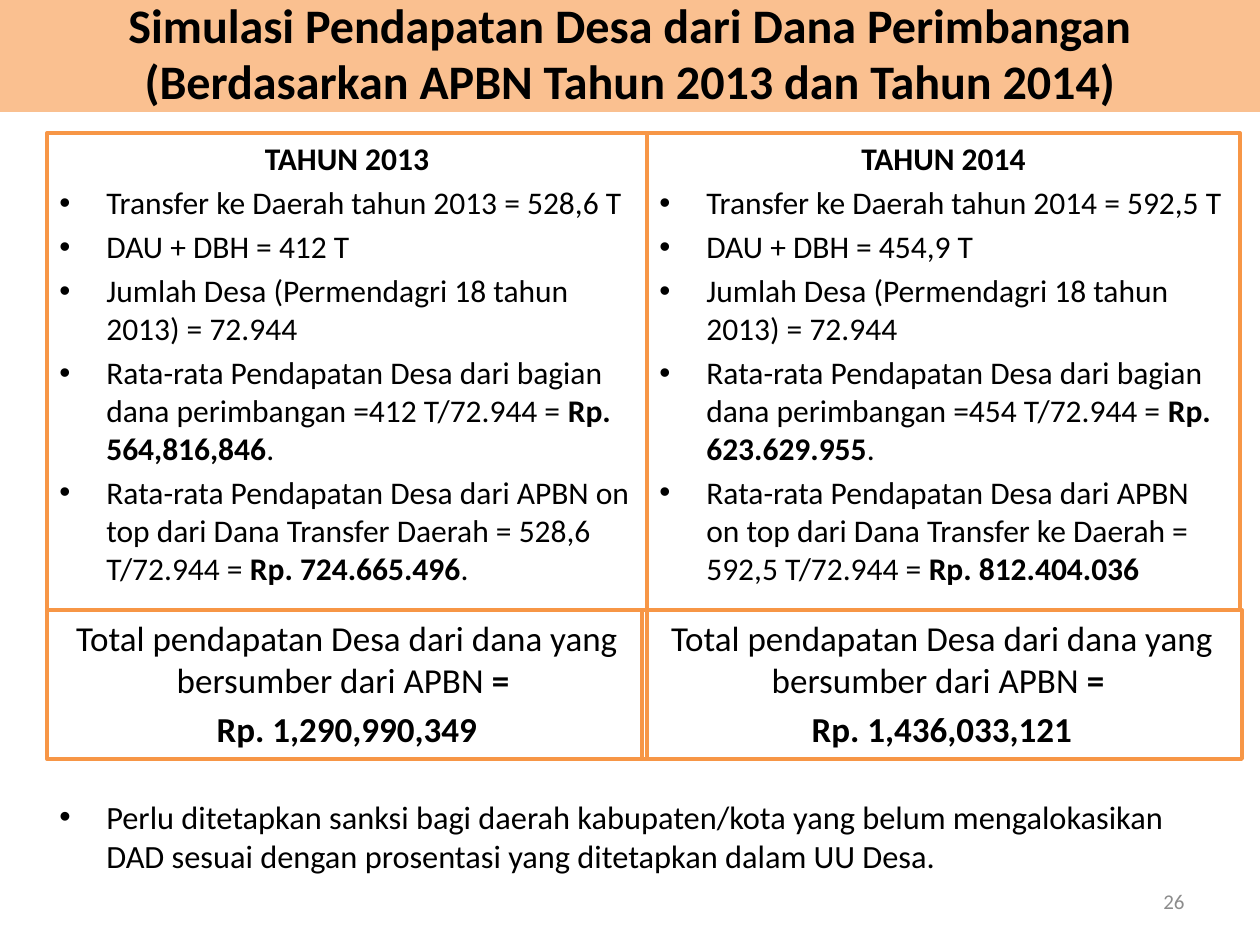
from lxml import etree
from pptx import Presentation
from pptx.dml.color import RGBColor
from pptx.enum.shapes import MSO_SHAPE
from pptx.enum.text import MSO_ANCHOR, PP_ALIGN
from pptx.oxml.ns import qn
from pptx.util import Emu, Pt

RECTANGLE = MSO_SHAPE.RECTANGLE
TOP, MIDDLE = MSO_ANCHOR.TOP, MSO_ANCHOR.MIDDLE
LEFT, CENTER, RIGHT = PP_ALIGN.LEFT, PP_ALIGN.CENTER, PP_ALIGN.RIGHT

PX_PER_INCH = 126
COLORS = {"text": "000000", "banner": "FAC090", "border": "F79646", "number": "8C8C8C"}
FONT = "Calibri"
BULLET_INDENT = 47


def px(value):
    return Emu(round(value * 914400 / PX_PER_INCH))


def color(name):
    return RGBColor.from_string(COLORS[name])


class SlideBuilder:
    def __init__(self, slide):
        self.slide = slide

    def panel(self, left, top, width, height, fill=None, line=None, anchor=TOP):
        shape = self.slide.shapes.add_shape(
            RECTANGLE, px(left), px(top), px(width), px(height))
        shape.shadow.inherit = False
        if fill:
            shape.fill.solid()
            shape.fill.fore_color.rgb = color(fill)
        else:
            shape.fill.background()
        if line:
            shape.line.color.rgb = color(line)
            shape.line.width = Pt(2.25)
        else:
            shape.line.fill.background()
        return self.frame(shape, anchor)

    def text_box(self, left, top, width, height, anchor=TOP):
        shape = self.slide.shapes.add_textbox(px(left), px(top), px(width), px(height))
        return self.frame(shape, anchor)

    def frame(self, shape, anchor):
        frame = shape.text_frame
        frame.word_wrap = True
        frame.vertical_anchor = anchor
        return frame

    def paragraph(self, frame, runs, size, align=LEFT, bold=None, before=0,
                  bullet=False, indent=0, ink="text"):
        first = not frame.paragraphs[0].runs
        paragraph = frame.paragraphs[0] if first else frame.add_paragraph()
        properties = paragraph._p.get_or_add_pPr()
        if bullet:
            properties.set("marL", str(px(BULLET_INDENT)))
            indent = -BULLET_INDENT
            etree.SubElement(properties, qn("a:buFont")).set("typeface", "Arial")
            etree.SubElement(properties, qn("a:buChar")).set("char", "•")
        if indent:
            properties.set("indent", str(px(indent)))
        paragraph.alignment = align
        if not first:
            paragraph.space_before = Pt(before)
        font = paragraph.font
        font.name, font.size, font.bold = FONT, Pt(size), bold
        font.color.rgb = color(ink)
        for text, strong in runs:
            run = paragraph.add_run()
            run.text = text
            if strong:
                run.font.bold = True
        return paragraph

    def title(self, lines):
        frame = self.panel(0, -2, 1260, 114, fill="banner", anchor=MIDDLE)
        for line in lines:
            paragraph = self.paragraph(frame, [(line, False)], 27.5, CENTER, bold=True)
            paragraph.line_spacing = 0.97

    def year_panel(self, left, width, heading, items):
        frame = self.panel(left, 133, width, 477, line="border")
        self.paragraph(frame, [(heading, False)], 18, CENTER, bold=True)
        for runs in items:
            self.paragraph(frame, runs, 18, before=3.6, bullet=True)

    def total_panel(self, left, amount):
        frame = self.panel(left, 610, 600, 149, line="border")
        label = "Total pendapatan Desa dari dana yang bersumber dari APBN "
        self.paragraph(frame, [(label, False), ("= ", True)], 20, CENTER)
        self.paragraph(frame, [(amount, False)], 20, CENTER, bold=True,
                       before=4, indent=-16)


def year_items(year, transfer, shared, share, average, source, result, ending):
    items = [
        [(f"Transfer ke Daerah tahun {year} = {transfer} T", False)],
        [(f"DAU + DBH = {shared} T", False)],
        [("Jumlah Desa (Permendagri 18 tahun 2013) = 72.944", False)],
        [("Rata-rata Pendapatan Desa dari bagian dana perimbangan "
          f"={share} T/72.944 = ", False), (average, True), (".", False)],
        [(f"Rata-rata Pendapatan Desa dari APBN on top dari {source} "
          f"= {transfer} T/72.944 = ", False), (result, True)],
    ]
    if ending:
        items[-1].append((ending, False))
    return items


def main():
    presentation = Presentation()
    presentation.slide_width, presentation.slide_height = px(1260), px(945)
    builder = SlideBuilder(presentation.slides.add_slide(presentation.slide_layouts[6]))

    builder.title(["Simulasi Pendapatan Desa dari Dana Perimbangan",
                   "(Berdasarkan APBN Tahun 2013 dan Tahun 2014)"])

    builder.year_panel(47, 600, "TAHUN 2013", year_items(
        2013, "528,6", "412", "412", "Rp. 564,816,846",
        "Dana Transfer Daerah", "Rp. 724.665.496", "."))
    builder.year_panel(647, 593, "TAHUN 2014", year_items(
        2014, "592,5", "454,9", "454", "Rp. 623.629.955",
        "Dana Transfer ke Daerah", "Rp. 812.404.036", ""))

    builder.total_panel(47, "Rp. 1,290,990,349")
    builder.total_panel(642, "Rp. 1,436,033,121")

    note = builder.text_box(47, 791, 1150, 118)
    builder.paragraph(note, [(
        "Perlu ditetapkan sanksi bagi daerah kabupaten/kota yang belum mengalokasikan "
        "DAD sesuai dengan prosentasi yang ditetapkan dalam UU Desa.", False)],
        18.5, bullet=True)

    number = builder.text_box(903, 876, 294, 50, anchor=MIDDLE)
    builder.paragraph(number, [("26", False)], 12, RIGHT, ink="number")

    presentation.save("out.pptx")


if __name__ == "__main__":
    main()
